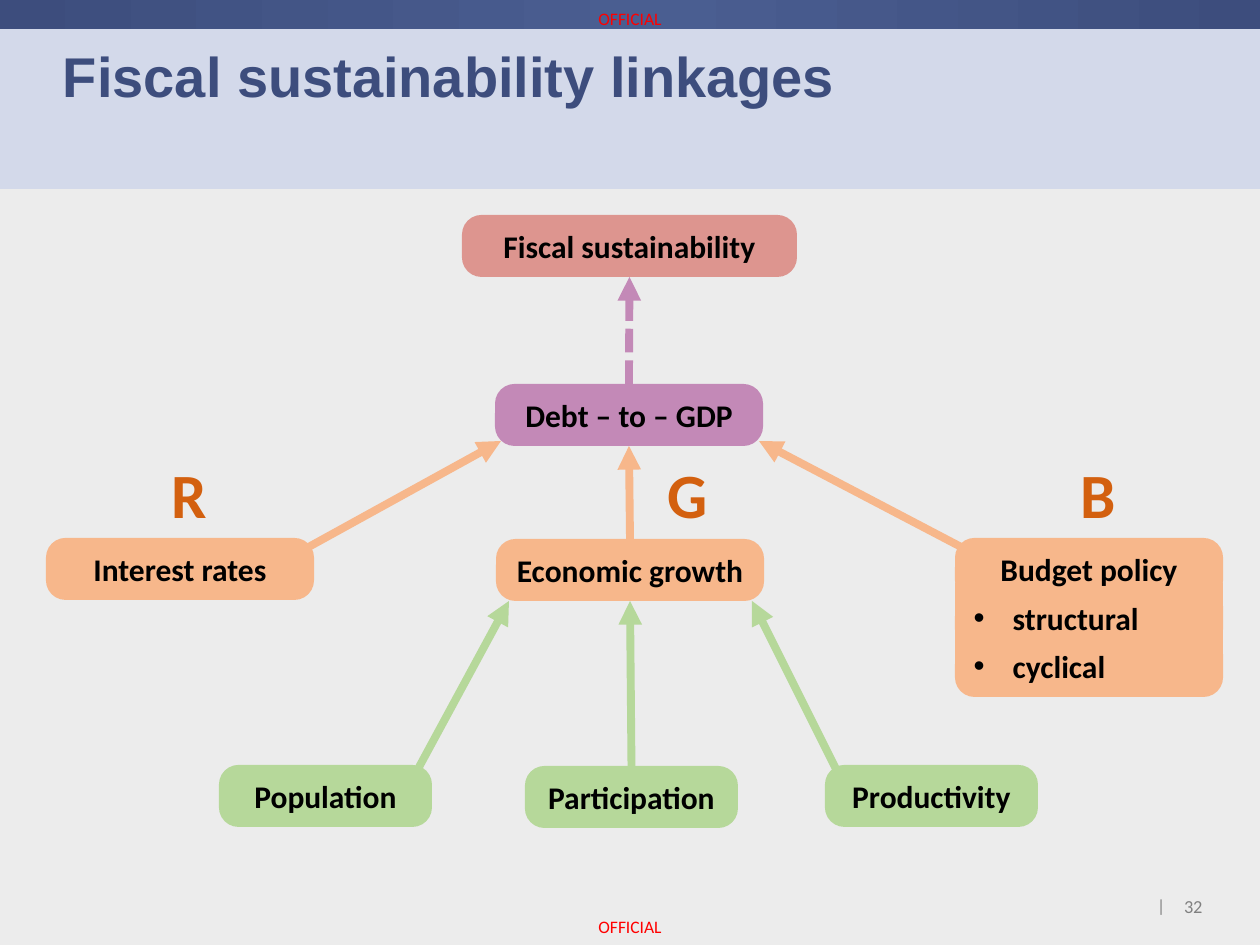
from dataclasses import dataclass

from lxml.etree import SubElement
from copy import deepcopy
from pptx import Presentation
from pptx.dml.color import RGBColor
from pptx.enum.dml import MSO_LINE
from pptx.enum.shapes import MSO_CONNECTOR, MSO_SHAPE
from pptx.enum.text import MSO_ANCHOR, PP_ALIGN
from pptx.oxml.ns import qn
from pptx.util import Emu, Pt

EMU_PER_PX = 914400 / 126
TOP, BOTTOM = 0, 2


@dataclass(frozen=True)
class Theme:
    background: str = "F2F2F2"
    panel: str = "ECECEC"
    header: str = "D3D9EA"
    navy: str = "3D4D7D"
    navy_light: str = "4A5E91"
    goal: str = "DD958F"
    debt: str = "C389B7"
    driver: str = "F7B78B"
    source: str = "B6D89A"
    letter: str = "D3600F"
    ink: str = "000000"
    muted: str = "808080"
    marking: str = "FF0000"
    body_font: str = "Calibri"
    title_font: str = "Arial"
    title_size: float = 32
    letter_size: float = 36
    box_size: float = 18
    number_size: float = 10.5
    small_size: float = 10
    arrow_width: float = 4.5


def px(length):
    return Emu(round(length * EMU_PER_PX))


def rgb(value):
    return RGBColor.from_string(value)


def write(frame, text, *, font, size, color, bold=False, align=PP_ALIGN.LEFT,
          anchor=MSO_ANCHOR.TOP, wrap=True, inset=(13, 6), bullet_indent=0,
          line_spacing=None, space_after=None):
    frame.word_wrap = wrap
    frame.vertical_anchor = anchor
    frame.margin_left = frame.margin_right = px(inset[0])
    frame.margin_top = frame.margin_bottom = px(inset[1])
    paragraph = frame.paragraphs[0]
    paragraph.alignment = align
    if line_spacing:
        paragraph.line_spacing = line_spacing
    if space_after:
        paragraph.space_after = Pt(space_after)
    if bullet_indent:
        properties = paragraph._p.get_or_add_pPr()
        properties.set("marL", str(px(bullet_indent)))
        properties.set("indent", str(-px(bullet_indent)))
        SubElement(properties, qn("a:buFont")).set("typeface", "Arial")
        SubElement(properties, qn("a:buChar")).set("char", "•")
    run = paragraph.add_run()
    run.text = text
    run.font.name = font
    run.font.size = Pt(size)
    run.font.bold = bold
    run.font.color.rgb = rgb(color)


class SlideBuilder:
    def __init__(self, slide, theme):
        self.slide = slide
        self.theme = theme
        slide.background.fill.solid()
        slide.background.fill.fore_color.rgb = rgb(theme.background)

    def band(self, left, top, width, height, color, kind=MSO_SHAPE.RECTANGLE):
        band = self.slide.shapes.add_shape(kind, *map(px, (left, top, width, height)))
        band.shadow.inherit = False
        band.fill.solid()
        band.fill.fore_color.rgb = rgb(color)
        band.line.fill.background()
        return band

    def gradient_band(self, left, top, width, height, edge, middle):
        band = self.band(left, top, width, height, edge)
        band.fill.gradient()
        band.fill.gradient_angle = 0
        stops = band._element.spPr.find(qn("a:gradFill")).find(qn("a:gsLst"))
        stops.insert(1, deepcopy(stops[0]))
        colors = ((0, edge), (0.52, middle), (1, edge))
        for stop, (position, color) in zip(band.fill.gradient_stops, colors):
            stop.position = position
            stop.color.rgb = rgb(color)

    def box(self, text, left, top, width, color, align=PP_ALIGN.CENTER, bullet_indent=0):
        box = self.band(left, top, width, 62, color, MSO_SHAPE.ROUNDED_RECTANGLE)
        box.adjustments[0] = 0.315
        write(box.text_frame, text, font=self.theme.body_font, size=self.theme.box_size,
              color=self.theme.ink, bold=True, align=align, anchor=MSO_ANCHOR.MIDDLE,
              bullet_indent=bullet_indent)
        return box

    def label(self, text, left, top, width, height, **style):
        label = self.slide.shapes.add_textbox(*map(px, (left, top, width, height)))
        write(label.text_frame, text, **{"font": self.theme.body_font, **style})

    def arrow(self, color, start=(0, 0), end=(0, 0), source=None, target=None, dash=None):
        arrow = self.slide.shapes.add_connector(
            MSO_CONNECTOR.STRAIGHT, *map(px, (*start, *end)))
        if source:
            arrow.begin_connect(source, TOP)
        if target:
            arrow.end_connect(target, BOTTOM)
        arrow.line.color.rgb = rgb(color)
        arrow.line.width = Pt(self.theme.arrow_width)
        if dash:
            arrow.line.dash_style = dash
        SubElement(arrow.line._get_or_add_ln(), qn("a:tailEnd")).set("type", "triangle")
        SubElement(arrow._element.spPr, qn("a:effectLst"))


def main():
    theme = Theme()
    deck = Presentation()
    deck.slide_width, deck.slide_height = px(1260), px(945)
    page = SlideBuilder(deck.slides.add_slide(deck.slide_layouts[6]), theme)

    page.band(0, 29, 1260, 916, theme.panel)
    page.band(0, 29, 1260, 160, theme.header)
    page.label("32", 1184, 895, 21, 23, size=theme.number_size, color=theme.muted,
               wrap=False, inset=(0, 0))
    page.label("|", 1157, 895, 6, 21, size=theme.small_size, color=theme.muted,
               align=PP_ALIGN.RIGHT, inset=(0, 0))
    page.gradient_band(0, 0, 1260, 29, theme.navy, theme.navy_light)
    for top in (0, 908):
        page.label("OFFICIAL", 580, top, 100, 37, size=theme.small_size,
                   color=theme.marking, align=PP_ALIGN.CENTER,
                   anchor=MSO_ANCHOR.MIDDLE, inset=(0, 0))
    page.label("Fiscal sustainability linkages", 63, 29, 1134, 161,
               font=theme.title_font, size=theme.title_size, color=theme.navy,
               bold=True, inset=(0, 6), line_spacing=1.1, space_after=6)

    page.band(955, 583, 268, 79, theme.driver)
    debt = page.box("Debt – to – GDP", 495, 384, 268, theme.debt)
    goal = page.box("Fiscal sustainability", 462, 215, 335, theme.goal)
    page.box("Population", 219, 765, 213, theme.source)
    participation = page.box("Participation", 525, 766, 213, theme.source)
    page.box("Productivity", 825, 765, 213, theme.source)
    growth = page.box("Economic growth", 496, 539, 268, theme.driver)
    page.box("Interest rates", 46, 538, 268, theme.driver)

    page.arrow(theme.driver, (305, 549), (501, 441))
    page.arrow(theme.driver, (965, 549), (759, 441))
    page.arrow(theme.driver, source=growth, target=debt)
    page.arrow(theme.source, (418, 769), (509, 601))
    page.arrow(theme.source, (837, 771), (752, 601))
    page.arrow(theme.source, source=participation, target=growth)
    page.arrow(theme.debt, source=debt, target=goal, dash=MSO_LINE.SQUARE_DOT)

    for letter, left in (("R", 159), ("G", 655), ("B", 1068)):
        page.label(letter, left, 450, 63, 89, size=theme.letter_size,
                   color=theme.letter, bold=True, wrap=False)

    page.box("Budget policy", 955, 538, 268, theme.driver)
    for component, top in (("structural", 587), ("cyclical", 635)):
        page.box(component, 955, top, 268, theme.driver,
                 align=PP_ALIGN.LEFT, bullet_indent=39)

    deck.save("out.pptx")


if __name__ == "__main__":
    main()
